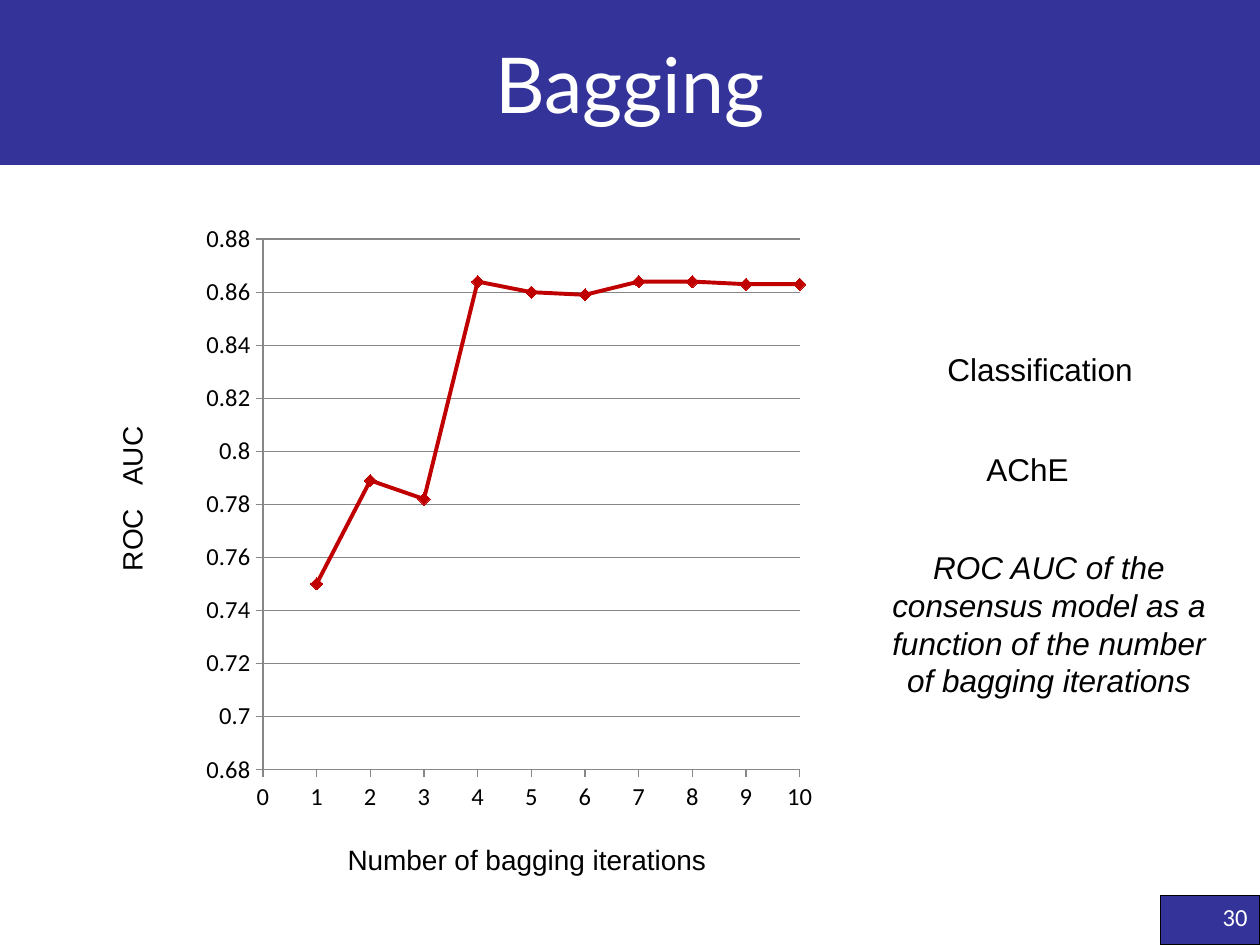
from dataclasses import dataclass

from lxml import etree
from pptx import Presentation
from pptx import util as u
from pptx.chart import data as chart_data
from pptx.dml.color import RGBColor
from pptx.enum import chart as ch
from pptx.enum import shapes, text
from pptx.oxml import ns


@dataclass(frozen=True)
class Theme:
    band: RGBColor = RGBColor(0x33, 0x33, 0x99)
    on_band: RGBColor = RGBColor(255, 255, 255)
    ink: RGBColor = RGBColor(0, 0, 0)
    curve: RGBColor = RGBColor(0xC0, 0, 0)
    grid: RGBColor = RGBColor(0x87, 0x87, 0x87)
    title_font: str = "Lato"
    body_font: str = "Arial"
    number_font: str = "Calibri"
    title_size: u.Pt = u.Pt(44)
    note_size: u.Pt = u.Pt(18)
    label_size: u.Pt = u.Pt(16)
    tick_size: u.Pt = u.Pt(14)


THEME = Theme()
ROC_AUC = [0.75, 0.789, 0.782, 0.864, 0.86, 0.859, 0.864, 0.864, 0.863, 0.863]
PLOT_AREA = {"x": 0.117, "y": 0.052, "w": 0.821, "h": 0.847}
WORD_GAP = 890  # extra space between the axis label's words, in 1/100 pt


def inches(*box):
    return [u.Inches(length) for length in box]


def style(font, name, size, color):
    font.name, font.size = name, size
    font.color.rgb = color


def add_title(slide, box, wording):
    title = slide.shapes.title
    title.left, title.top, title.width, title.height = inches(*box)
    title.fill.solid()
    title.fill.fore_color.rgb = THEME.band
    title.text_frame.text = wording
    title.text_frame.vertical_anchor = text.MSO_ANCHOR.MIDDLE
    line = title.text_frame.paragraphs[0]
    line.alignment = text.PP_ALIGN.CENTER
    style(line.font, THEME.title_font, THEME.title_size, THEME.on_band)


def add_page_number(slide, box, number):
    tab = slide.shapes.add_shape(shapes.MSO_SHAPE.RECTANGLE, *inches(*box))
    tab.shadow.inherit = False
    tab.fill.solid()
    tab.fill.fore_color.rgb = THEME.band
    tab.line.color.rgb = THEME.ink
    tab.line.width = u.Pt(0.75)
    tab.text_frame.text = number
    tab.text_frame.vertical_anchor = text.MSO_ANCHOR.TOP
    line = tab.text_frame.paragraphs[0]
    line.alignment = text.PP_ALIGN.RIGHT
    style(line.font, THEME.number_font, THEME.tick_size, THEME.on_band)


def add_label(slide, box, runs, size, wrap=False):
    label = slide.shapes.add_textbox(*inches(*box))
    label.text_frame.word_wrap = wrap
    line = label.text_frame.paragraphs[0]
    for wording in runs:
        line.add_run().text = wording
    style(line.font, THEME.body_font, size, THEME.ink)
    return label


def add_notes_column(slide, box):
    left, top, width, height = box
    add_label(slide, (left + 0.54, top, 1.69, 0.4), ["Classification"], THEME.note_size)
    add_label(slide, (left + 0.85, top + 0.79, 0.86, 0.4), ["AChE"], THEME.note_size)
    summary = add_label(
        slide, (left, top + 1.57, width, height - 1.57),
        ["ROC AUC of the consensus model as a function of the number of bagging iterations"],
        THEME.note_size, wrap=True)
    summary_line = summary.text_frame.paragraphs[0]
    summary_line.alignment = text.PP_ALIGN.CENTER
    summary_line.font.italic = True


def format_axis(axis, low, high, step, number_format):
    axis.minimum_scale, axis.maximum_scale, axis.major_unit = low, high, step
    axis.major_tick_mark = ch.XL_TICK_MARK.OUTSIDE
    axis.minor_tick_mark = ch.XL_TICK_MARK.NONE
    axis.tick_labels.number_format = number_format
    axis.tick_labels.number_format_is_linked = False
    style(axis.tick_labels.font, THEME.number_font, THEME.tick_size, THEME.ink)
    axis.format.line.color.rgb = THEME.grid
    axis.format.line.width = u.Pt(0.75)


def fix_plot_area(chart):
    plot_area = chart._chartSpace.chart.plotArea
    for old in plot_area.findall(ns.qn("c:layout")):
        plot_area.remove(old)
    layout = etree.Element(ns.qn("c:layout"))
    manual = etree.SubElement(layout, ns.qn("c:manualLayout"))
    settings = {"layoutTarget": "inner", "xMode": "edge", "yMode": "edge", **PLOT_AREA}
    for tag, value in settings.items():
        etree.SubElement(manual, ns.qn(f"c:{tag}")).set("val", str(value))
    plot_area.insert(0, layout)


def add_curve(slide, box):
    points = chart_data.XyChartData()
    series = points.add_series("Series 1")
    for iteration, auc in enumerate(ROC_AUC, start=1):
        series.add_data_point(iteration, auc)
    chart = slide.shapes.add_chart(
        ch.XL_CHART_TYPE.XY_SCATTER_LINES, *inches(*box), points).chart
    chart.has_legend = chart.has_title = False
    style(chart.font, THEME.number_font, THEME.tick_size, THEME.ink)
    chart.plots[0].vary_by_categories = False
    fix_plot_area(chart)

    # Axes and gridlines
    format_axis(chart.category_axis, 0, 10, 1, "General")
    format_axis(chart.value_axis, 0.68, 0.88, 0.02, "General")
    chart.category_axis.has_major_gridlines = False
    chart.value_axis.has_major_gridlines = True
    gridline = chart.value_axis.major_gridlines.format.line
    gridline.color.rgb = THEME.grid
    gridline.width = u.Pt(0.75)

    # Curve and markers
    curve = chart.plots[0].series[0]
    curve.smooth = False
    curve.format.line.color.rgb = THEME.curve
    curve.format.line.width = u.Pt(2.25)
    curve.marker.style = ch.XL_MARKER_STYLE.DIAMOND
    curve.marker.size = 7
    curve.marker.format.fill.solid()
    curve.marker.format.fill.fore_color.rgb = THEME.curve
    curve.marker.format.line.color.rgb = THEME.curve


def add_chart_region(slide, box):
    left, top, width, height = box
    add_curve(slide, box)
    add_label(slide, (left + 1.18, top + height + 0.03, 3.08, 0.37),
              ["Number of bagging iterations"], THEME.label_size)
    auc_label = add_label(slide, (left - 1.11, top + 2.13, 1.35, 0.37),
                          ["ROC", " ", "AUC"], THEME.label_size)
    auc_label.rotation = 270
    gap = auc_label.text_frame.paragraphs[0].runs[1]
    gap.font._element.set("spc", str(WORD_GAP))


def main():
    deck = Presentation()
    deck.slide_width, deck.slide_height = inches(10, 7.5)
    slide = deck.slides.add_slide(deck.slide_layouts.get_by_name("Title Only"))
    add_title(slide, (0, 0, 10, 1.31), "Bagging")
    add_page_number(slide, (9.21, 7.11, 0.79, 0.39), "30")
    add_notes_column(slide, (6.88, 2.73, 2.89, 2.88))
    add_chart_region(slide, (1.48, 1.64, 5.19, 4.97))
    deck.save("out.pptx")


if __name__ == "__main__":
    main()
